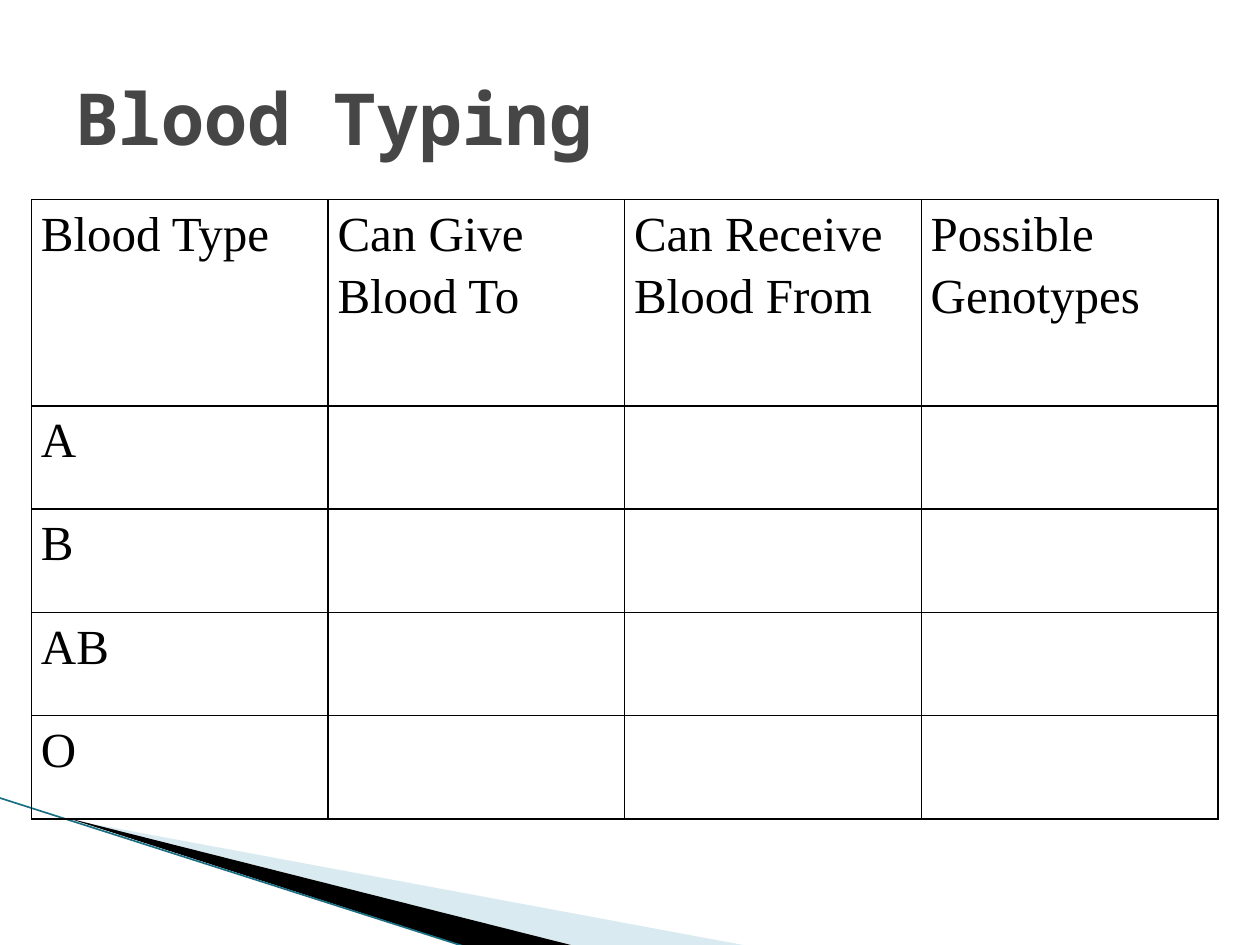
"""Build the blood typing slide with its blank answer table."""
import pptx
import pptx.dml.color
import pptx.enum.shapes
import pptx.enum.text
import pptx.oxml
import pptx.oxml.ns
import pptx.util
import lxml.etree

Pt = pptx.util.Pt
RGB = pptx.dml.color.RGBColor.from_string
qn = pptx.oxml.ns.qn

theme = {
    "title": {"name": "Noto Sans Mono", "size": Pt(41), "bold": True},
    "cell": {"name": "Times New Roman", "size": Pt(28), "bold": False},
    "grey": "464646",
    "black": "000000",
    "pale": "A0CBDC",
    "line": "1B6F84",
}


def style(font, form, tint):
    for key, val in form.items():
        setattr(font, key, val)
    font.color.rgb = RGB(tint)


def place(shape, *box):
    for key, val in zip(("left", "top", "width", "height"), box):
        setattr(shape, key, Pt(val))


deck = pptx.Presentation()
deck.slide_width, deck.slide_height = Pt(720), Pt(540)
slide = deck.slides.add_slide(deck.slide_layouts[5])

title = slide.shapes.title
place(title, 36, 21.6, 648, 90)
frame = title.text_frame
frame.text = "Blood Typing"
frame.auto_size = pptx.enum.text.MSO_AUTO_SIZE.NONE
frame.vertical_anchor = pptx.enum.text.MSO_ANCHOR.MIDDLE
head = frame.paragraphs[0]
head.alignment = pptx.enum.text.PP_ALIGN.LEFT
style(head.font, theme["title"], theme["grey"])

wedges = [
    ("pale", 40, (56.2, 393.8, 299.5, 113.8),
     [(39.6, 468.4), (428.4, 540.7), (328.3, 540.7)]),
    ("black", 100, (-4.3, 455.8, 299.5, 66.2),
     [(38.2, 467.3), (329, 540.7), (267.8, 541.4)]),
]
for tint, alpha, box, dots in wedges:
    pen = slide.shapes.build_freeform(*dots[0], scale=Pt(1))
    pen.add_line_segments(dots[1:], close=True)
    wedge = pen.convert_to_shape()
    left, top = wedge.left, wedge.top
    place(wedge, *box)
    track = wedge._element.find(".//" + qn("a:path"))
    track.set("w", str(wedge.width))
    track.set("h", str(wedge.height))
    for node, (x, y) in zip(track.iter(qn("a:pt")), dots):
        node.set("x", str(Pt(x) - wedge.left))
        node.set("y", str(Pt(y) - wedge.top))
    wedge.shadow.inherit = False
    wedge.line.fill.background()
    wedge.fill.solid()
    wedge.fill.fore_color.rgb = RGB(theme[tint])
    if alpha < 100:
        tone = wedge.fill._xPr.find(".//" + qn("a:srgbClr"))
        lxml.etree.SubElement(tone, qn("a:alpha"), val=str(alpha * 1000))

edge = slide.shapes.add_connector(
    pptx.enum.shapes.MSO_CONNECTOR.STRAIGHT, Pt(-0.7), Pt(455.8), Pt(267.1), Pt(541.4))
edge.line.color.rgb = RGB(theme["line"])
edge.line.width = Pt(0.95)
lxml.etree.SubElement(edge._element.spPr, qn("a:effectLst"))

rows = [
    ["Blood Type", "Can Give Blood To", "Can Receive Blood From", "Possible Genotypes"],
    ["A"], ["B"], ["AB"], ["O"],
]
highs = [118, 59, 59, 59, 59]
wide = 169.5
grid = slide.shapes.add_table(
    len(rows), 4, Pt(18), Pt(114), Pt(4 * wide), Pt(sum(highs))).table
grid.first_row = grid.horz_banding = False
for col in grid.columns:
    col.width = Pt(wide)
pads = {"margin_left": Pt(5.4), "margin_right": Pt(5.4), "margin_top": 0, "margin_bottom": 0}
for r, (row, high) in enumerate(zip(rows, highs)):
    grid.rows[r].height = Pt(high)
    for c in range(4):
        cell = grid.cell(r, c)
        for key, val in pads.items():
            setattr(cell, key, val)
        props = cell._tc.get_or_add_tcPr()
        for side in ("lnL", "lnR", "lnT", "lnB"):
            rule = lxml.etree.SubElement(props, qn("a:" + side), w=str(Pt(1)))
            solid = lxml.etree.SubElement(rule, qn("a:solidFill"))
            lxml.etree.SubElement(solid, qn("a:srgbClr"), val=theme["black"])
        cell.fill.background()
        if c < len(row):
            cell.text = row[c]
        para = cell.text_frame.paragraphs[0]
        para.line_spacing = 1.15
        style(para.font, theme["cell"], theme["black"])

deck.save("out.pptx")
